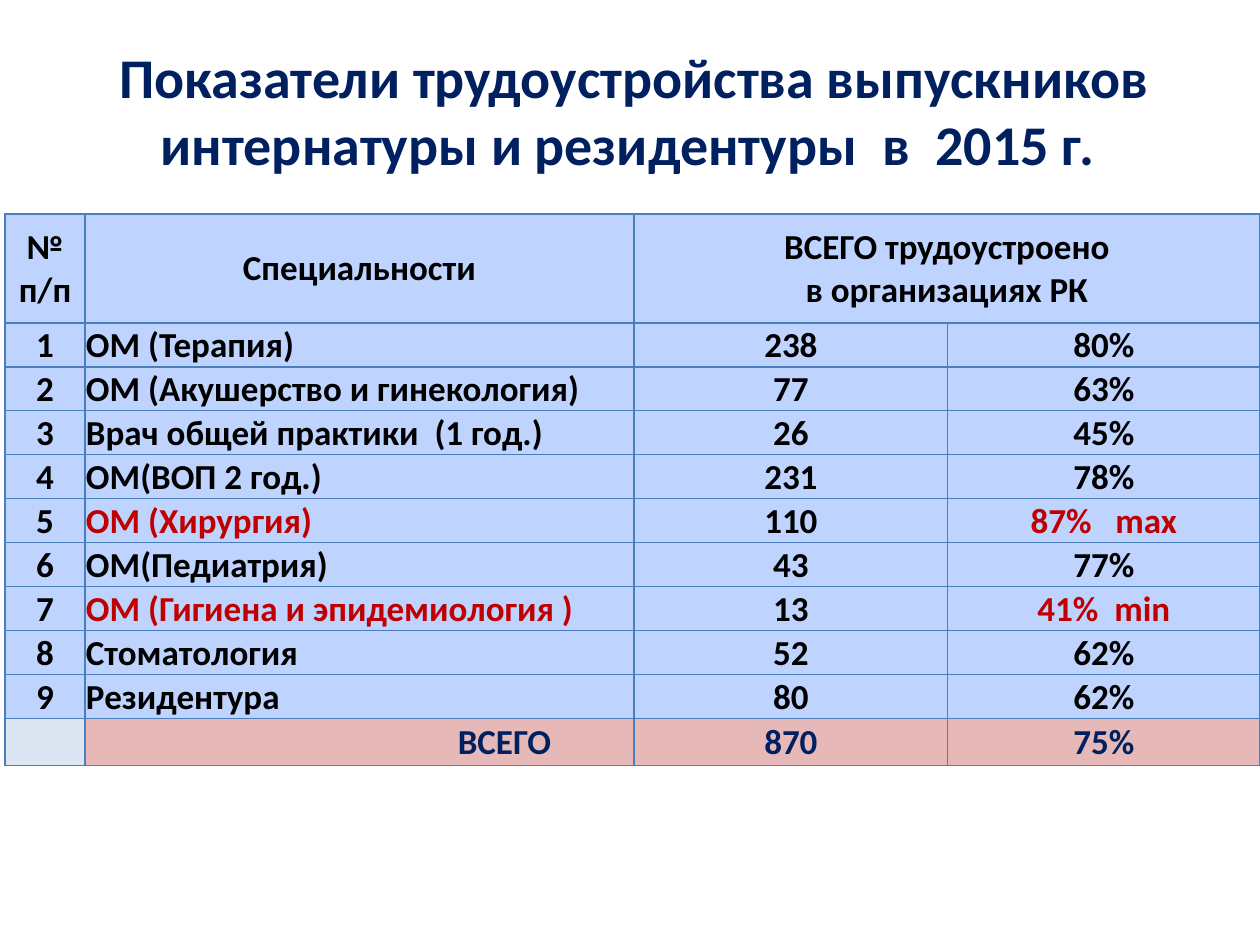
"""Build a slide with the employment rates of medical graduates."""
from lxml import etree
from pptx import Presentation
from pptx.dml.color import RGBColor
from pptx.enum.text import MSO_ANCHOR, MSO_AUTO_SIZE, PP_ALIGN
from pptx.oxml.ns import qn
from pptx.util import Pt

PIXEL = 914400 / 126
LEFT, CENTER, RIGHT = PP_ALIGN.LEFT, PP_ALIGN.CENTER, PP_ALIGN.RIGHT
MIDDLE = MSO_ANCHOR.MIDDLE
FONT = "Calibri"
COLORS = {
    "navy": "002060",
    "black": "000000",
    "red": "C00000",
    "border": "4B7EBC",
    "body": "BFD3FF",
    "total": "E6B9B8",
    "corner": "DCE6F2",
}
COLUMN_WIDTHS = [80, 549, 314, 312]
HEADER_HEIGHT, ROW_HEIGHT, TOTAL_HEIGHT = 109, 44, 47
HEADER = ["№ п/п", "Специальности", "ВСЕГО трудоустроено\nв организациях РК", ""]
SPECIALTIES = [
    ("ОМ (Терапия)", "238", "80%"),
    ("ОМ (Акушерство и гинекология)", "77", "63%"),
    ("Врач общей практики  (1 год.)", "26", "45%"),
    ("ОМ(ВОП 2 год.)", "231", "78%"),
    ("ОМ (Хирургия)", "110", "87%   max"),
    ("ОМ(Педиатрия)", "43", "77%"),
    ("ОМ (Гигиена и эпидемиология )", "13", "41%  min"),
    ("Стоматология", "52", "62%"),
    ("Резидентура", "80", "62%"),
]
TOTAL = ["", "ВСЕГО", "870", "75%"]


def px(length):
    """Turn pixels into EMU."""
    return round(length * PIXEL)


def color(name):
    """Return a palette colour."""
    return RGBColor.from_string(COLORS[name])


def style_paragraphs(text_frame, size, color_name, alignment):
    """Format every paragraph of a text frame."""
    for paragraph in text_frame.paragraphs:
        paragraph.alignment = alignment
        paragraph.font.name = FONT
        paragraph.font.size = Pt(size)
        paragraph.font.bold = True
        paragraph.font.color.rgb = color(color_name)


def add_borders(cell):
    """Draw a thin line on all four sides of a cell."""
    properties = cell._tc.get_or_add_tcPr()
    for index, side in enumerate(("lnL", "lnR", "lnT", "lnB")):
        line = etree.Element(qn(f"a:{side}"), w=str(Pt(0.75)))
        fill = etree.SubElement(line, qn("a:solidFill"))
        etree.SubElement(fill, qn("a:srgbClr"), val=COLORS["border"])
        properties.insert(index, line)


def fill_cell(cell, text, fill="body", color_name="black", alignment=CENTER):
    """Write and format one table cell."""
    cell.text = text
    cell.vertical_anchor = MIDDLE
    cell.margin_left = cell.margin_right = cell.margin_top = px(1)
    cell.margin_bottom = 0
    cell.fill.solid()
    cell.fill.fore_color.rgb = color(fill)
    style_paragraphs(cell.text_frame, 20, color_name, alignment)
    add_borders(cell)


def add_title(slide, left, top, width, height):
    """Place the slide title."""
    title = slide.shapes.title
    title.left, title.top = px(left), px(top)
    title.width, title.height = px(width), px(height)
    frame = title.text_frame
    frame.text = " Показатели трудоустройства выпускников интернатуры и резидентуры  в  2015 г."
    frame.word_wrap = True
    frame.auto_size = MSO_AUTO_SIZE.NONE
    frame.vertical_anchor = MIDDLE
    style_paragraphs(frame, 32, "navy", CENTER)


def add_employment_table(slide, left, top):
    """Place the table of specialties with its header and total rows."""
    heights = [HEADER_HEIGHT] + [ROW_HEIGHT] * len(SPECIALTIES) + [TOTAL_HEIGHT]
    table = slide.shapes.add_table(
        len(heights), len(COLUMN_WIDTHS), px(left), px(top),
        px(sum(COLUMN_WIDTHS)), px(sum(heights))).table
    for column, width in zip(table.columns, COLUMN_WIDTHS):
        column.width = px(width)
    for row, height in zip(table.rows, heights):
        row.height = px(height)

    for column, text in enumerate(HEADER):
        fill_cell(table.cell(0, column), text)
    table.cell(0, 2).merge(table.cell(0, 3))

    for number, (name, count, share) in enumerate(SPECIALTIES, start=1):
        accent = "red" if share.endswith(("max", "min")) else "black"
        fill_cell(table.cell(number, 0), str(number))
        fill_cell(table.cell(number, 1), name, color_name=accent, alignment=LEFT)
        fill_cell(table.cell(number, 2), count)
        fill_cell(table.cell(number, 3), share, color_name=accent)

    last = len(heights) - 1
    for column, text in enumerate(TOTAL):
        fill = "total" if text else "corner"
        fill_cell(table.cell(last, column), text, fill, "navy")
    label = table.cell(last, 1)
    label.margin_right = px(83)
    label.text_frame.paragraphs[0].alignment = RIGHT


def main():
    """Build and save the presentation."""
    presentation = Presentation()
    presentation.slide_width, presentation.slide_height = px(1260), px(945)
    slide = presentation.slides.add_slide(presentation.slide_layouts[5])
    add_employment_table(slide, 5, 214)
    add_title(slide, 35, 45, 1186, 129)
    presentation.save("out.pptx")


if __name__ == "__main__":
    main()
